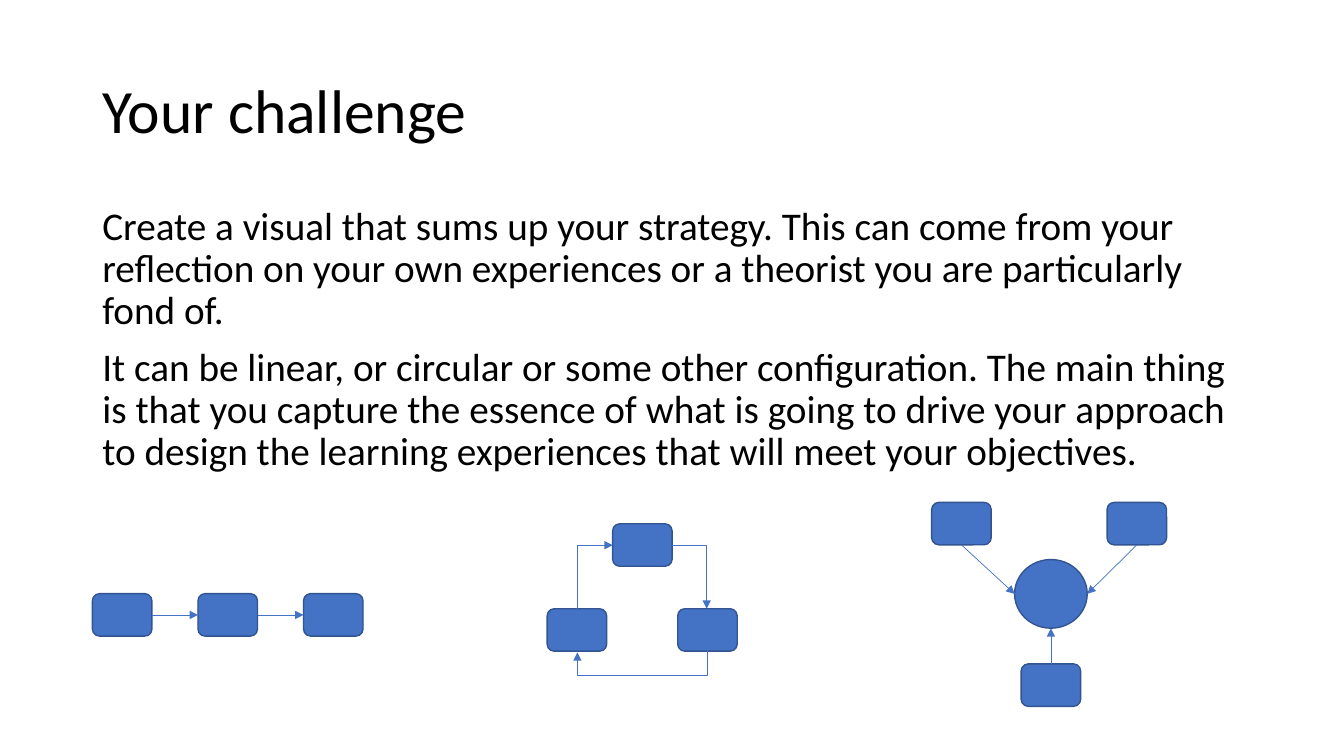
import pptx
import pptx.util
import pptx.dml.color
import pptx.enum.shapes
import pptx.enum.text
import pptx.oxml
import pptx.oxml.ns
from pptx.util import Cm

COLORS = {"text": "000000", "node": "4472C4", "edge": "325491"}
FONT = "Calibri"
BOX_W, BOX_H = 1.5, 1.07
TOP, LEFT, BOTTOM, RIGHT = range(4)
SHAPES = pptx.enum.shapes.MSO_SHAPE
CONNECTORS = pptx.enum.shapes.MSO_CONNECTOR


def rgb(name):
    """Return the named colour."""
    return pptx.dml.color.RGBColor.from_string(COLORS[name])


def write(frame, *paragraphs, size, before=0, anchor=pptx.enum.text.MSO_ANCHOR.TOP):
    """Fill a text frame with equally formatted paragraphs."""
    frame.word_wrap = True
    frame.auto_size = pptx.enum.text.MSO_AUTO_SIZE.NONE
    frame.vertical_anchor = anchor
    for index, words in enumerate(paragraphs):
        paragraph = frame.add_paragraph() if index else frame.paragraphs[0]
        paragraph.alignment = pptx.enum.text.PP_ALIGN.LEFT
        paragraph.line_spacing = 0.9
        paragraph.space_before = pptx.util.Pt(before)
        run = paragraph.add_run()
        run.text = words
        run.font.size = pptx.util.Pt(size)
        run.font.name = FONT
        run.font.color.rgb = rgb("text")


def add_node(slide, left, top, width=BOX_W, height=BOX_H, kind=SHAPES.ROUNDED_RECTANGLE):
    """Add one filled diagram node."""
    node = slide.shapes.add_shape(kind, Cm(left), Cm(top), Cm(width), Cm(height))
    node.shadow.inherit = False
    node.fill.solid()
    node.fill.fore_color.rgb = rgb("node")
    node.line.color.rgb = rgb("edge")
    node.line.width = pptx.util.Pt(1)
    return node


def style_arrow(arrow):
    """Give a connector its thin line and triangular head."""
    arrow.line.color.rgb = rgb("node")
    arrow.line.width = pptx.util.Pt(0.5)
    head = pptx.oxml.parse_xml(f'<a:tailEnd {pptx.oxml.ns.nsdecls("a")} type="triangle"/>')
    arrow.line._get_or_add_ln().append(head)
    arrow._element.spPr.append(
        pptx.oxml.parse_xml(f'<a:effectLst {pptx.oxml.ns.nsdecls("a")}/>'))


def add_arrow(slide, source, side, target=None, target_side=None, end=(0, 0)):
    """Add a straight arrow from a node to another node or to a point."""
    arrow = slide.shapes.add_connector(
        CONNECTORS.STRAIGHT, 0, 0, Cm(end[0]), Cm(end[1]))
    arrow.begin_connect(source, side)
    if target is not None:
        arrow.end_connect(target, target_side)
    style_arrow(arrow)


def add_elbow(slide, start, end, preset, turned=False, flipped=False, bend=None):
    """Add a bent arrow, leaving vertically when turned."""
    (x1, y1), (x2, y2) = start, end
    width, height = abs(x2 - x1), abs(y2 - y1)
    middle_x, middle_y = (x1 + x2) / 2, (y1 + y2) / 2
    if turned:
        width, height = height, width
    left, top = middle_x - width / 2, middle_y - height / 2
    arrow = slide.shapes.add_connector(
        CONNECTORS.ELBOW, Cm(left), Cm(top), Cm(left + width), Cm(top + height))
    frame = arrow._element.spPr.find(pptx.oxml.ns.qn("a:xfrm"))
    if turned:
        frame.set("rot", "5400000")
    if flipped:
        frame.set("flipH", "1")
        frame.set("flipV", "1")
    geometry = arrow._element.spPr.find(pptx.oxml.ns.qn("a:prstGeom"))
    geometry.set("prst", preset)
    if bend is not None:
        guides = geometry.find(pptx.oxml.ns.qn("a:avLst"))
        guides.append(pptx.oxml.parse_xml(
            f'<a:gd {pptx.oxml.ns.nsdecls("a")} name="adj1" fmla="val {round(bend * 100000)}"/>'))
    style_arrow(arrow)


def add_chain(slide):
    """Draw the linear strategy."""
    steps = [add_node(slide, 2.33 + 2.66 * step, 14.96) for step in range(3)]
    for step, following in zip(steps, steps[1:]):
        add_arrow(slide, step, RIGHT, following, LEFT)


def add_cycle(slide):
    """Draw the circular strategy."""
    for left, top in ((15.44, 13.2), (17.08, 15.34), (13.79, 15.34)):
        add_node(slide, left, top)
    add_elbow(slide, (16.94, 13.74), (17.81, 15.34), "bentConnector2")
    add_elbow(slide, (17.83, 16.39), (14.55, 16.44), "bentConnector3", turned=True, bend=12.6)
    add_elbow(slide, (14.55, 15.34), (15.44, 13.74), "bentConnector2",
              turned=True, flipped=True)


def add_hub(slide):
    """Draw the strategy with three inputs to one centre."""
    left, top, width, height = 25.57, 14.1, 1.83, 1.73
    add_node(slide, left, top, width, height, SHAPES.OVAL)
    middle_x, middle_y = left + width / 2, top + height / 2
    inputs = (
        (27.9, 12.66, BOTTOM, (left + width, middle_y)),
        (23.48, 12.66, BOTTOM, (left, middle_y)),
        (middle_x - BOX_W / 2, 16.73, TOP, (middle_x, top + height)),
    )
    for box_left, box_top, side, end in inputs:
        add_arrow(slide, add_node(slide, box_left, box_top), side, end=end)


def main():
    """Build and save the slide."""
    deck = pptx.Presentation()
    deck.slide_width, deck.slide_height = Cm(33.87), Cm(19.05)
    slide = deck.slides.add_slide(deck.slide_layouts.get_by_name("Title Only"))
    title = slide.shapes.title
    title.left, title.top, title.width, title.height = Cm(2.33), Cm(1.01), Cm(29.21), Cm(3.68)
    write(title.text_frame, "Your challenge", size=44,
          anchor=pptx.enum.text.MSO_ANCHOR.MIDDLE)
    brief = slide.shapes.add_textbox(Cm(2.33), Cm(5.07), Cm(29.21), Cm(7.22))
    write(
        brief.text_frame,
        "Create a visual that sums up your strategy. This can come from your reflection "
        "on your own experiences or a theorist you are particularly fond of.",
        "It can be linear, or circular or some other configuration. The main thing is that "
        "you capture the essence of what is going to drive your approach to design the "
        "learning experiences that will meet your objectives.",
        size=28, before=10)
    add_chain(slide)
    add_cycle(slide)
    add_hub(slide)
    deck.save("out.pptx")


if __name__ == "__main__":
    main()
